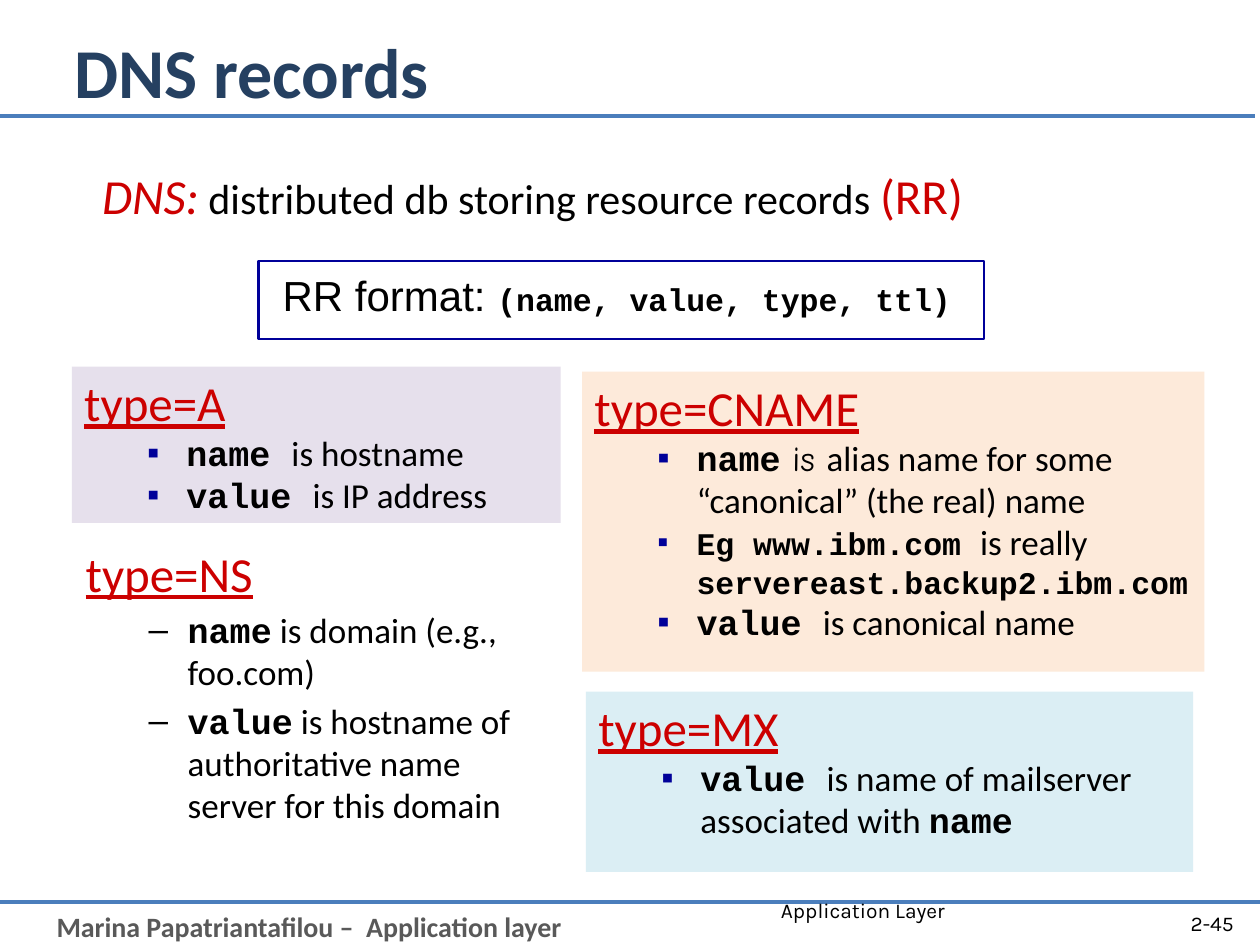
from pptx import Presentation
from pptx.dml.color import RGBColor
from pptx.enum.shapes import MSO_CONNECTOR, MSO_SHAPE
from pptx.enum.text import MSO_ANCHOR, MSO_AUTO_SIZE, PP_ALIGN
from pptx.oxml.ns import qn
from pptx.util import Inches, Pt
from lxml.etree import SubElement

# Theme: each text style is font, size, colour, then font flags
THEME = {
    "rule": "4B7EBC", "frame": "000099", "bullet": "000099",
    "lilac": "E6E0EC", "peach": "FDEADA", "aqua": "DBEEF4",
    "styles": {
        "title": ("Calibri", 40, "254061", "bold"),
        "footer": ("Calibri", 16, "595959", "bold"),
        "small": ("Karla", 12, "000000"),
        "term": ("Calibri", 28, "CC0000", "italic"),
        "abbr": ("Calibri", 28, "CC0000"),
        "lead": ("Calibri", 24, "000000"),
        "format": ("Arial", 24, "000000"),
        "head": ("Calibri", 28, "CC0000", "underline"),
        "text": ("Calibri", 20, "000000"),
        "alt": ("Comic Neue", 20, "000000"),
        "code": ("Courier New", 20, "000000", "bold"),
        "host": ("Courier New", 18, "000000", "bold"),
    },
}

# Content: a paragraph is a list of (text, style) runs
TITLE = [("DNS records", "title")]
INTRO = [("DNS:", "term"), (" distributed db storing resource records ", "lead"), ("(RR)", "abbr")]
RR_FORMAT = [("RR format: ", "format"), ("(name, value, type, ttl)", "host")]

# Record types: heading, then (bullet, runs) items
NS = ("type=NS", [
    ("–", [("name", "code"), (" is domain (e.g., foo.com)", "text")]),
    ("–", [("value", "code"), (" is hostname of authoritative name server for this domain", "text")]),
])
PANELS = [
    ((0.57, 2.91, 3.88, 1.24), "lilac", ("type=A", [
        ("▪", [("name ", "code"), ("is hostname", "text")]),
        ("▪", [("value ", "code"), ("is IP address", "text")]),
    ])),
    ((4.62, 2.95, 4.94, 2.38), "peach", ("type=CNAME", [
        ("▪", [("name", "code"), (" is ", "alt"),
               ("alias name for some “canonical” (the real) name", "text")]),
        ("▪", [("Eg www.ibm.com ", "host"), ("is really", "text")]),
        (None, [("servereast.backup2.ibm.com", "host")]),
        ("▪", [("value ", "code"), ("is canonical name", "text")]),
    ])),
    ((4.65, 5.49, 4.82, 1.43), "aqua", ("type=MX", [
        ("▪", [("value ", "code"), ("is name of mailserver associated with ", "text"),
               ("name", "code")]),
    ])),
]

# Page furniture: position, runs, alignment, anchor
LABELS = [
    ((0.35, 7.17, 9.25, 0.33), [("Marina Papatriantafilou –  Application layer", "footer")],
     PP_ALIGN.LEFT, MSO_ANCHOR.TOP),
    ((6.1, 7.07, 3.17, 0.31), [("Application Layer", "small")], PP_ALIGN.LEFT, MSO_ANCHOR.TOP),
    ((9.09, 7.13, 0.8, 0.4), [("2-45", "small")], PP_ALIGN.RIGHT, MSO_ANCHOR.MIDDLE),
    ((1.96, 2.09, 5.87, 0.5), RR_FORMAT, PP_ALIGN.CENTER, MSO_ANCHOR.MIDDLE),
]
RULES = [(0, 7.16), (-0.04, 0.92)]  # left end and height of each full-width rule


def rgb(name):
    return RGBColor.from_string(THEME.get(name, name))


def place(sp, box):
    sp.left, sp.top, sp.width, sp.height = map(Inches, box)


def setup(sp, anchor=MSO_ANCHOR.TOP):
    tf = sp.text_frame
    tf.word_wrap, tf.auto_size, tf.vertical_anchor = True, MSO_AUTO_SIZE.NONE, anchor
    return tf


def fill_paragraph(p, runs, align=PP_ALIGN.LEFT, before=0):
    p.alignment, p.space_before = align, Pt(before)
    for text, style in runs:
        font, size, color, *flags = THEME["styles"][style]
        r = p.add_run()
        r.text = text
        r.font.name, r.font.size, r.font.color.rgb = font, Pt(size), rgb(color)
        for flag in flags:
            setattr(r.font, flag, True)


def set_bullet(p, char, margin=0.0, hang=0.0):
    pPr = p._p.get_or_add_pPr()
    pPr.set("marL", str(Inches(margin)))
    pPr.set("indent", str(-Inches(hang)))
    if char is None:
        SubElement(pPr, qn("a:buNone"))
        return
    if char == "▪":
        clr = SubElement(pPr, qn("a:buClr"))
        SubElement(clr, qn("a:srgbClr"), val=THEME["bullet"])
    SubElement(pPr, qn("a:buFont"), typeface="Arial")
    SubElement(pPr, qn("a:buChar"), char=char)


def fill_record(tf, record, before=0):
    heading, items = record
    p = tf.paragraphs[0]
    set_bullet(p, None)
    fill_paragraph(p, [(heading, "head")])
    for char, runs in items:
        p = tf.add_paragraph()
        p.level = 1
        set_bullet(p, char, 0.81, 0.31 if char else 0)
        fill_paragraph(p, runs, before=before)


def add_rect(s, box):
    sp = s.shapes.add_shape(MSO_SHAPE.RECTANGLE, *map(Inches, box))
    sp.shadow.inherit = False
    return sp


prs = Presentation()
prs.slide_width, prs.slide_height = Inches(10), Inches(7.5)
s = prs.slides.add_slide(prs.slide_layouts[3])
title, intro, ns = s.placeholders

# Horizontal rules
for left, y in RULES:
    line = s.shapes.add_connector(MSO_CONNECTOR.STRAIGHT, Inches(left), Inches(y),
                                  Inches(left + 10), Inches(y))
    line.line.color.rgb, line.line.width = rgb("rule"), Pt(2.25)
    SubElement(line._element.spPr, qn("a:effectLst"))

# Title, introduction and the NS record in the placeholders
place(title, (0.49, 0.07, 8.5, 0.98))
fill_paragraph(setup(title, MSO_ANCHOR.MIDDLE).paragraphs[0], TITLE)
place(intro, (0.71, 1.26, 8.55, 0.56))
p = setup(intro).paragraphs[0]
set_bullet(p, None)
fill_paragraph(p, INTRO)
place(ns, (0.58, 4.26, 3.87, 2.48))
fill_record(setup(ns), NS, before=4)

# Footer, page number and record format
for box, runs, align, anchor in LABELS:
    tb = s.shapes.add_textbox(*map(Inches, box))
    fill_paragraph(setup(tb, anchor).paragraphs[0], runs, align)

# Frame around the record format
frame = add_rect(s, (2.05, 2.07, 5.76, 0.62))
frame.fill.background()
frame.line.color.rgb, frame.line.width = rgb("frame"), Pt(1.5)

# Coloured record panels
for box, color, record in PANELS:
    panel = add_rect(s, box)
    panel.fill.solid()
    panel.fill.fore_color.rgb = rgb(color)
    panel.line.fill.background()
    fill_record(setup(panel), record)

prs.save("out.pptx")
